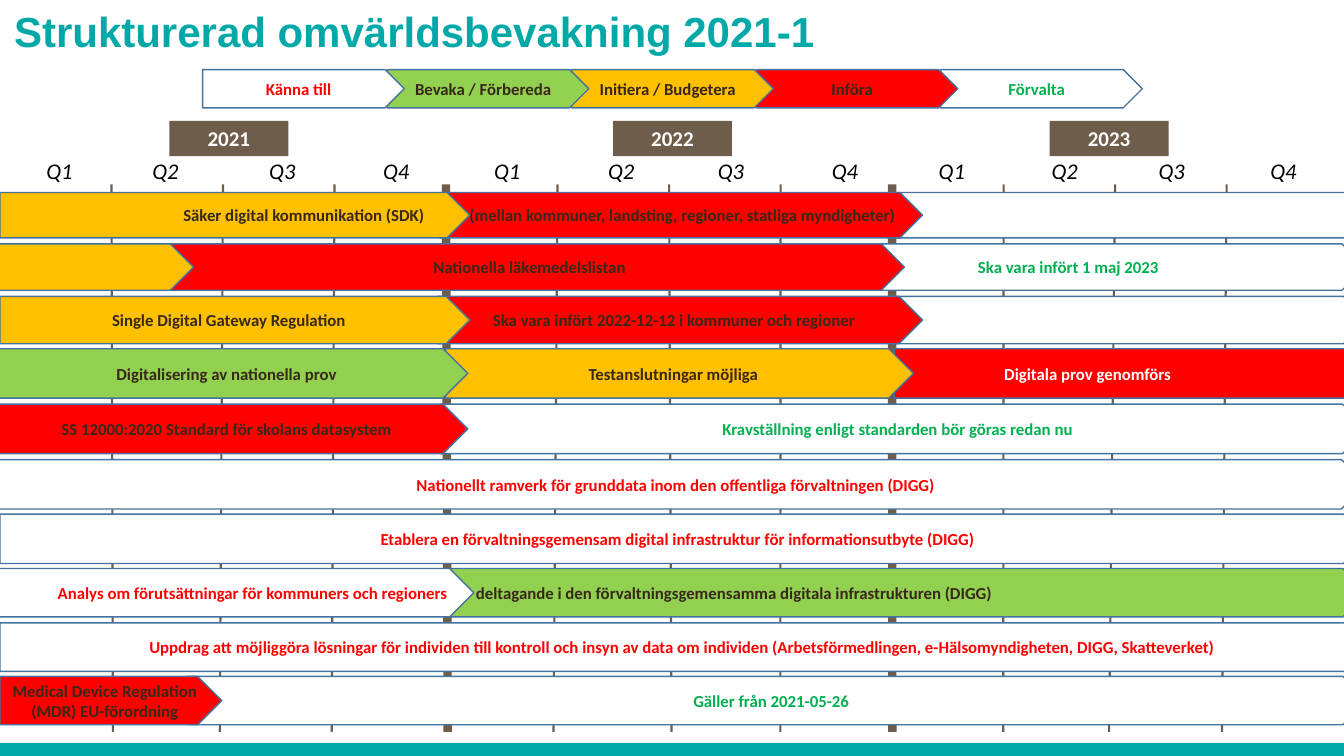
from lxml import etree
from pptx import Presentation
from pptx.dml.color import RGBColor
from pptx.enum.shapes import MSO_CONNECTOR, MSO_SHAPE
from pptx.enum.text import MSO_ANCHOR, MSO_AUTO_SIZE, PP_ALIGN
from pptx.oxml.ns import qn
from pptx.util import Inches, Pt

RECT, PLATE = MSO_SHAPE.RECTANGLE, MSO_SHAPE.PENTAGON
STRAIGHT = MSO_CONNECTOR.STRAIGHT
TOP, MIDDLE, BOTTOM = MSO_ANCHOR.TOP, MSO_ANCHOR.MIDDLE, MSO_ANCHOR.BOTTOM
LEFT, CENTER, RIGHT = PP_ALIGN.LEFT, PP_ALIGN.CENTER, PP_ALIGN.RIGHT
NO_AUTOFIT = MSO_AUTO_SIZE.NONE

TEAL = RGBColor(0x00, 0xA9, 0xA7)
BROWN = RGBColor(0x6F, 0x5D, 0x4C)
DARK = RGBColor(0x38, 0x28, 0x19)
OUTLINE = RGBColor(0x43, 0x73, 0x9E)
WHITE = RGBColor(0xFF, 0xFF, 0xFF)
BLACK = RGBColor(0x00, 0x00, 0x00)
RED = RGBColor(0xFF, 0x00, 0x00)
AMBER = RGBColor(0xFF, 0xC0, 0x00)
LIME = RGBColor(0x92, 0xD0, 0x50)
GREEN = RGBColor(0x00, 0xB0, 0x50)

QUARTER = 1.106
LINE_ENDS = [1.12, 2.18, 3.29, 4.44, 5.49, 6.66, 7.74, 8.85, 9.95, 11, 12.12]
LABEL_LEFTS = [0, 1.05, 2.21, 3.34, 4.44, 5.57, 6.66, 7.79, 8.85, 9.97, 11.03, 12.14]
YEARS = [("2021", 1.68), ("2022", 6.08), ("2023", 10.41)]

LEGEND = [
    ("Känna till", WHITE, RED),
    ("Bevaka / Förbereda", LIME, DARK),
    ("Initiera / Budgetera", AMBER, DARK),
    ("Införa", RED, DARK),
    ("Förvalta", WHITE, GREEN),
]

# Each row: top, height, then plates as left, width, fill, text, colour, alignment, left and right inset
ROWS = [
    (1.91, 0.45, [
        (8.81, 4.75, WHITE),
        (4.36, 4.79, RED, "(mellan kommuner, landsting, regioner, statliga myndigheter)",
         DARK, CENTER, 0.24),
        (0, 4.66, AMBER, "Säker digital kommunikation (SDK)", DARK, CENTER, 1.58)]),
    (2.42, 0.46, [
        (8.6, 4.94, WHITE, "Ska vara infört 1 maj 2023", GREEN, LEFT, 1.1),
        (1.65, 7.32, RED, "Nationella läkemedelslistan", DARK),
        (-0.02, 1.94, AMBER)]),
    (2.94, 0.47, [
        (8.81, 4.75, WHITE),
        (4.34, 4.81, RED, "Ska vara infört 2022-12-12 i kommuner och regioner", DARK),
        (0, 4.66, AMBER, "Single Digital Gateway Regulation", DARK)]),
    (3.46, 0.49, [
        (8.87, 4.7, RED, "Digitala prov genomförs", WHITE, LEFT, 1.09),
        (4.42, 4.64, AMBER, "Testanslutningar möjliga", DARK),
        (-0.02, 4.66, LIME, "Digitalisering av nationella prov", DARK)]),
    (4.01, 0.49, [
        (4.37, 9.19, WHITE, "Kravställning enligt standarden bör göras redan nu", GREEN),
        (-0.02, 4.66, RED, "SS 12000:2020 Standard för skolans datasystem", DARK)]),
    (4.56, 0.49, [
        (-0.02, 13.57, WHITE,
         "Nationellt ramverk för grunddata inom den offentliga förvaltningen (DIGG)", RED)]),
    (5.1, 0.49, [
        (0, 13.57, WHITE,
         "Etablera en förvaltningsgemensam digital infrastruktur för informationsutbyte (DIGG)",
         RED)]),
    (5.64, 0.48, [
        (4.4, 9.16, LIME,
         "deltagande i den förvaltningsgemensamma digitala infrastrukturen (DIGG)",
         DARK, LEFT, 0.32),
        (-0.04, 4.74, WHITE, "Analys om förutsättningar för kommuners och regioners",
         RED, RIGHT, 0.1, 0.14)]),
    (6.18, 0.48, [
        (0, 13.66, WHITE,
         "Uppdrag att möjliggöra lösningar för individen till kontroll och insyn av data om "
         "individen (Arbetsförmedlingen, e-Hälsomyndigheten, DIGG, Skatteverket)", RED)]),
    (6.71, 0.48, [
        (1.86, 11.7, WHITE, "Gäller från 2021-05-26", GREEN),
        (0, 2.2, RED, "Medical Device Regulation (MDR) EU-förordning", DARK)]),
]


def add_text(sp, text, size, color, align=CENTER, anchor=TOP, font="Calibri",
             bold=False, italic=False):
    """Write one formatted run into a shape."""
    tf = sp.text_frame
    tf.word_wrap = True
    tf.vertical_anchor = anchor
    p = tf.paragraphs[0]
    p.alignment = align
    r = p.add_run()
    r.text = text
    r.font.name, r.font.size = font, Pt(size)
    r.font.bold, r.font.italic = bold, italic
    r.font.color.rgb = color


def add_box(s, kind, x, y, w, h, fill, outline=None):
    """Add a flat filled shape, with an outline if one is given."""
    sp = s.shapes.add_shape(kind, Inches(x), Inches(y), Inches(w), Inches(h))
    sp.shadow.inherit = False
    sp.fill.solid()
    sp.fill.fore_color.rgb = fill
    if outline is None:
        sp.line.fill.background()
    else:
        sp.line.color.rgb = outline
        sp.line.width = Pt(1)
    return sp


def add_plate(s, x, y, w, h, fill, text="", color=DARK, align=CENTER,
              inset_left=0.1, inset_right=0.1):
    """Add an arrow-shaped phase plate with its label."""
    sp = add_box(s, PLATE, x, y, w, h, fill, OUTLINE)
    if text:
        sp.text_frame.margin_left = Inches(inset_left)
        sp.text_frame.margin_right = Inches(inset_right)
        add_text(sp, text, 12, color, align, MIDDLE, bold=True)


def add_title(s, x, y, w, h):
    """Move and format the title placeholder."""
    sp = s.shapes.title
    sp.left, sp.top, sp.width, sp.height = Inches(x), Inches(y), Inches(w), Inches(h)
    tf = sp.text_frame
    tf.auto_size = NO_AUTOFIT
    tf.margin_left = tf.margin_right = tf.margin_top = tf.margin_bottom = 0
    add_text(sp, "Strukturerad omvärldsbevakning 2021-1", 30, TEAL, LEFT, BOTTOM,
             "Arial", bold=True)


def add_quarter_lines(s, top, bottom):
    """Draw the quarter dividers, thicker at the turn of each year."""
    for i, end in enumerate(LINE_ENDS, 1):
        line = s.shapes.add_connector(STRAIGHT, Inches(i * QUARTER), Inches(top),
                                      Inches(end), Inches(bottom))
        line.line.color.rgb = BROWN
        line.line.width = Pt(1.5 if i % 4 else 6)
        etree.SubElement(line._element.spPr, qn("a:effectLst"))


def add_time_header(s, y):
    """Place the year boxes and the quarter labels below them."""
    for year, x in YEARS:
        add_text(add_box(s, RECT, x, y, 1.18, 0.35, BROWN), year, 15, WHITE, bold=True)
    for i, x in enumerate(LABEL_LEFTS):
        sp = s.shapes.add_textbox(Inches(x), Inches(y + 0.31), Inches(1.18), Inches(0.37))
        add_text(sp, f"Q{i % 4 + 1}", 16, BLACK, italic=True)


def add_legend(s, x, y):
    """Lay out the overlapping legend plates, the first one in front."""
    for i, (text, fill, color) in reversed(list(enumerate(LEGEND))):
        add_plate(s, x + i * 1.83, y, 2, 0.38, fill, text, color)


def add_rows(s):
    """Lay out every timeline row, the earliest phase in front."""
    for top, height, plates in ROWS:
        for x, w, *label in plates:
            add_plate(s, x, top, w, height, *label)


def main():
    """Build and save the slide."""
    prs = Presentation()
    prs.slide_width, prs.slide_height = Inches(13.33), Inches(7.5)
    s = prs.slides.add_slide(prs.slide_layouts[5])
    add_box(s, RECT, 0, 7.37, 13.33, 0.13, TEAL)
    add_title(s, 0.14, 0, 10.39, 0.56)
    add_quarter_lines(s, 1.83, 7.26)
    add_time_header(s, 1.2)
    add_legend(s, 2.01, 0.69)
    add_rows(s)
    prs.save("out.pptx")


if __name__ == "__main__":
    main()
